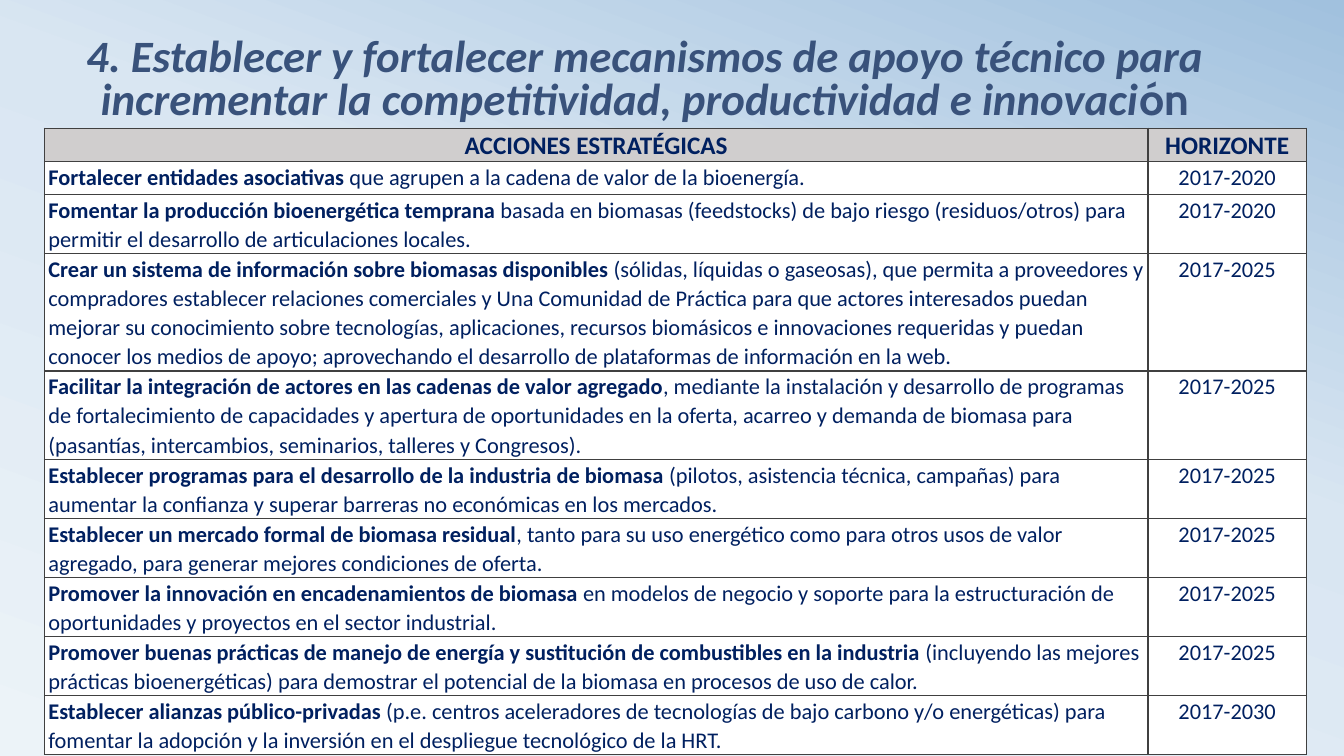
from copy import deepcopy
from typing import NamedTuple

from lxml import etree
from pptx import Presentation
from pptx.dml.color import RGBColor
from pptx.enum.text import MSO_ANCHOR, MSO_AUTO_SIZE, PP_ALIGN
from pptx.oxml.ns import qn
from pptx.util import Cm, Pt

LEFT, MID = PP_ALIGN.LEFT, PP_ALIGN.CENTER
BOTTOM = MSO_ANCHOR.BOTTOM
FIXED = MSO_AUTO_SIZE.NONE

HUES = {
    "title": "39527B", "text": "002060", "edge": "404040",
    "head": "D0CECE", "body": "FFFFFF",
}
STOPS = [(0, "ECF3F8"), (58, "D9E6F2"), (100, "A1C1DE")]
WIDTHS = [27.81, 3.99]
LINE = 0.73
LOW = 0.83


class Action(NamedTuple):
    name: str
    rest: str
    years: str
    lines: int


ACTIONS = [
    Action("Fortalecer entidades asociativas ",
           "que agrupen a la cadena de valor de la bioenergía.", "2017-2020", 1),
    Action("Fomentar la producción bioenergética temprana ",
           "basada en biomasas (feedstocks) de bajo riesgo (residuos/otros) para "
           "permitir el desarrollo de articulaciones locales.", "2017-2020", 2),
    Action("Crear un sistema de información sobre biomasas disponibles ",
           "(sólidas, líquidas o gaseosas), que permita a proveedores y compradores "
           "establecer relaciones comerciales y Una Comunidad de Práctica para que "
           "actores interesados puedan mejorar su conocimiento sobre tecnologías, "
           "aplicaciones, recursos biomásicos e innovaciones requeridas y puedan "
           "conocer los medios de apoyo; aprovechando el desarrollo de plataformas "
           "de información en la web.", "2017-2025", 4),
    Action("Facilitar la integración de actores en las cadenas de valor agregado",
           ", mediante la instalación y desarrollo de programas de fortalecimiento "
           "de capacidades y apertura de oportunidades en la oferta, acarreo y "
           "demanda de biomasa para (pasantías, intercambios, seminarios, talleres "
           "y Congresos).", "2017-2025", 3),
    Action("Establecer programas para el desarrollo de la industria de biomasa ",
           "(pilotos, asistencia técnica, campañas) para aumentar la confianza y "
           "superar barreras no económicas en los mercados.", "2017-2025", 2),
    Action("Establecer un mercado formal de biomasa residual",
           ", tanto para su uso energético como para otros usos de valor agregado, "
           "para generar mejores condiciones de oferta.", "2017-2025", 2),
    Action("Promover la innovación en encadenamientos de biomasa",
           " en modelos de negocio y soporte para la estructuración de "
           "oportunidades y proyectos en el sector industrial.", "2017-2025", 2),
    Action("Promover buenas prácticas de manejo de energía y sustitución de "
           "combustibles en la industria ",
           "(incluyendo las mejores prácticas bioenergéticas) para demostrar el "
           "potencial de la biomasa en procesos de uso de calor.", "2017-2025", 2),
    Action("Establecer alianzas público-privadas ",
           "(p.e. centros aceleradores de tecnologías de bajo carbono y/o "
           "energéticas) para fomentar la adopción y la inversión en el despliegue "
           "tecnológico de la HRT.", "2017-2030", 2),
]


def write(para, text: str, *, size: float = 16, bold: bool = False,
          slant: bool = False, face: str = "Calibri", hue: str = "text") -> None:
    run = para.add_run()
    run.text = text
    font = run.font
    font.size, font.name = Pt(size), face
    font.bold, font.italic = bold, slant
    font.color.rgb = RGBColor.from_string(HUES[hue])


def paint_back(slide) -> None:
    """Fill the background with the three-stop gradient."""
    fill = slide.background.fill
    fill.gradient()
    fill.gradient_angle = 70
    stops = slide.element.xpath(".//a:gsLst")[0]
    stops.append(deepcopy(stops[-1]))
    for node, stop, (pos, hue) in zip(stops, fill.gradient_stops, STOPS):
        node.set("pos", str(pos * 1000))
        stop.color.rgb = RGBColor.from_string(hue)


def add_edges(cell) -> None:
    props = cell._tc.get_or_add_tcPr()
    for spot, side in enumerate("LRTB"):
        line = etree.Element(qn(f"a:ln{side}"), w=str(Pt(1)))
        fill = etree.SubElement(line, qn("a:solidFill"))
        etree.SubElement(fill, qn("a:srgbClr"), val=HUES["edge"])
        props.insert(spot, line)


def style_cell(cell, hue: str, align: PP_ALIGN):
    """Format an empty cell and return its paragraph."""
    cell.fill.solid()
    cell.fill.fore_color.rgb = RGBColor.from_string(HUES[hue])
    cell.margin_left = cell.margin_right = Cm(0.1)
    cell.margin_top, cell.margin_bottom = Cm(0.01), Cm(0)
    add_edges(cell)
    para = cell.text_frame.paragraphs[0]
    para.alignment, para.line_spacing, para.space_after = align, 1.07, Pt(8)
    return para


def add_title(slide) -> None:
    title = slide.shapes.title
    title.left, title.top = Cm(0.94), Cm(0.53)
    title.width, title.height = Cm(30.63), Cm(2.72)
    frame = title.text_frame
    frame.word_wrap, frame.auto_size = True, FIXED
    frame.vertical_anchor = BOTTOM
    para = frame.paragraphs[0]
    para.alignment, para.line_spacing = MID, 0.8
    write(para, "4. Establecer y fortalecer mecanismos de apoyo técnico para "
          "incrementar la competitividad, productividad e innovaci",
          size=32, bold=True, slant=True, hue="title")
    write(para, "ón", size=32, bold=True, face="Cabin", hue="title")


def add_plan(slide) -> None:
    """Add the table of actions and their time spans."""
    highs = [LOW] + [max(LOW, LINE * act.lines) for act in ACTIONS]
    table = slide.shapes.add_table(
        len(highs), len(WIDTHS), Cm(1.12), Cm(3.23),
        Cm(sum(WIDTHS)), Cm(sum(highs))).table
    table.first_row = table.horz_banding = False
    for col, width in zip(table.columns, WIDTHS):
        col.width = Cm(width)
    for row, high in zip(table.rows, highs):
        row.height = Cm(high)
    for col, label in enumerate(("ACCIONES ESTRATÉGICAS", "HORIZONTE")):
        write(style_cell(table.cell(0, col), "head", MID), label, size=18, bold=True)
    for row, act in enumerate(ACTIONS, 1):
        para = style_cell(table.cell(row, 0), "body", LEFT)
        write(para, act.name, bold=True)
        write(para, act.rest)
        write(style_cell(table.cell(row, 1), "body", MID), act.years)


def main() -> None:
    deck = Presentation()
    deck.slide_width, deck.slide_height = Cm(33.87), Cm(19.05)
    slide = deck.slides.add_slide(deck.slide_layouts[5])
    paint_back(slide)
    add_title(slide)
    add_plan(slide)
    deck.save("out.pptx")


if __name__ == "__main__":
    main()
